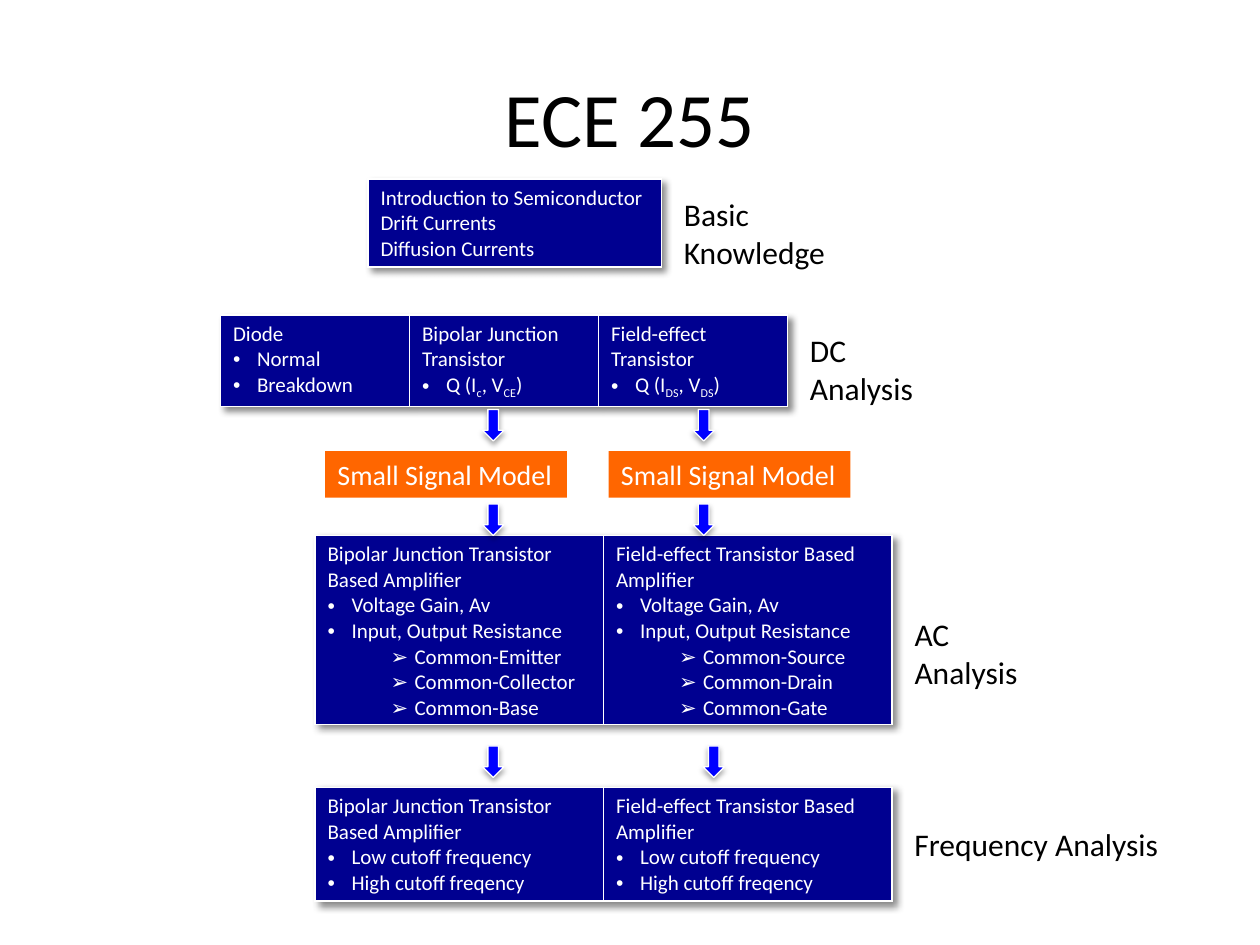
from lxml.etree import SubElement
from pptx import Presentation
from pptx.dml.color import RGBColor
from pptx.enum.shapes import MSO_SHAPE as Shape
from pptx.enum.text import MSO_ANCHOR as Anchor, PP_ALIGN as Align
from pptx.oxml import parse_xml
from pptx.oxml.ns import nsdecls, qn
from pptx.util import Inches, Pt

FONT = "Calibri"
WHITE, BLACK, NAVY, BLUE, ORANGE = "FFFFFF", "000000", "000090", "0000FF", "FF6600"
BULLETS = {"•": 0.19, "➢": 0.69}
HANG = 0.19

INTRODUCTION = [["Introduction to Semiconductor", "Drift Currents", "Diffusion Currents"]]
DEVICES = [
    ["Diode", "•Normal", "•Breakdown"],
    ["Bipolar Junction Transistor", "•Q (I~c~, V~CE~)"],
    ["Field-effect Transistor", "•Q (I~DS~, V~DS~)"],
]
AMPLIFIERS = {
    "Bipolar Junction Transistor Based Amplifier": ["Emitter", "Collector", "Base"],
    "Field-effect Transistor Based Amplifier": ["Source", "Drain", "Gate"],
}
GAINS = [
    [name, "•Voltage Gain, Av", "•Input, Output Resistance"]
    + [f"➢Common-{terminal}" for terminal in terminals]
    for name, terminals in AMPLIFIERS.items()
]
CUTOFFS = [[name, "•Low cutoff frequency", "•High cutoff freqency"] for name in AMPLIFIERS]

# left, top, column width, height, cells, label, label top
STAGES = [
    (2.92, 1.42, 2.33, 0.7, INTRODUCTION, "Basic Knowledge", 1.5),
    (1.75, 2.5, 1.5, 0.72, DEVICES, "DC Analysis", 2.58),
    (2.5, 4.25, 2.29, 1.5, GAINS, "AC Analysis", 4.83),
    (2.5, 6.25, 2.29, 0.9, CUTOFFS, "Frequency Analysis", 6.5),
]
MODEL_LEFTS = [2.58, 4.83]
ARROW_ROWS = [(3.25, [3.83, 5.5]), (4, [3.83, 5.5]), (5.92, [3.83, 5.58])]


def color(value):
    return RGBColor.from_string(value)


def paint(target, value):
    target.fill.solid()
    target.fill.fore_color.rgb = color(value)


def shadow(blur, distance, angle, alpha):
    return parse_xml(
        f'<a:effectLst {nsdecls("a")}><a:outerShdw blurRad="{Pt(blur)}" dist="{Pt(distance)}" '
        f'dir="{angle * 60000}" algn="ctr" rotWithShape="0"><a:srgbClr val="{BLACK}">'
        f'<a:alpha val="{alpha * 1000}"/></a:srgbClr></a:outerShdw></a:effectLst>'
    )


def write(para, text, size, ink):
    bullet = text[0] if text[0] in BULLETS else None
    if bullet:
        text = text[1:]
        props = para._p.get_or_add_pPr()
        props.set("marL", str(Inches(BULLETS[bullet])))
        props.set("indent", str(Inches(-HANG)))
        if bullet == "➢":
            para.level = 1
        SubElement(props, qn("a:buFont")).set("typeface", "Arial")
        SubElement(props, qn("a:buChar")).set("char", bullet)
    for index, part in enumerate(text.split("~")):
        span = para.add_run()
        span.text = part
        span.font.size = Pt(size)
        span.font.name = FONT
        span.font.color.rgb = color(ink)
        if index % 2:
            span.font._element.set("baseline", "-25000")


def add_text(page, text, left, top, width, height, size, wrap=False):
    box = page.shapes.add_textbox(*map(Inches, (left, top, width, height)))
    box.text_frame.word_wrap = wrap
    write(box.text_frame.paragraphs[0], text, size, BLACK)
    return box


def add_stage(page, left, top, width, height, cells):
    frame = page.shapes.add_table(
        1, len(cells), *map(Inches, (left, top, width * len(cells), height))
    )
    table = frame.table
    table._tbl.tblPr.insert(0, shadow(4, 3, 45, 45))
    for column, (cell, lines) in enumerate(zip(table.rows[0].cells, cells)):
        table.columns[column].width = Inches(width)
        props = cell._tc.get_or_add_tcPr()
        for side in "LRTB":
            border = SubElement(props, qn(f"a:ln{side}"), w=str(Pt(1)))
            ink = SubElement(border, qn("a:solidFill"))
            SubElement(ink, qn("a:srgbClr"), val=WHITE)
        paint(cell, NAVY)
        for index, line in enumerate(lines):
            body = cell.text_frame
            para = body.add_paragraph() if index else body.paragraphs[0]
            write(para, line, 12, WHITE)


def add_model(page, left):
    box = page.shapes.add_shape(Shape.RECTANGLE, *map(Inches, (left, 3.58, 1.92, 0.37)))
    box.shadow.inherit = False
    paint(box, ORANGE)
    box.line.fill.background()
    para = box.text_frame.paragraphs[0]
    para.alignment = Align.LEFT
    write(para, "Small Signal Model", 16, WHITE)


def add_arrow(page, left, top):
    arrow = page.shapes.add_shape(Shape.DOWN_ARROW, *map(Inches, (left, top, 0.17, 0.25)))
    paint(arrow, BLUE)
    arrow.line.color.rgb = color(WHITE)
    arrow.line.width = Pt(0.75)
    arrow._element.spPr.append(shadow(3.1, 1.8, 90, 35))


def main():
    deck = Presentation()
    deck.slide_width, deck.slide_height = Inches(10), Inches(7.5)
    page = deck.slides.add_slide(deck.slide_layouts[6])

    title = add_text(page, "ECE 255", 0.5, 0.3, 9, 1.25, 44, wrap=True)
    title.text_frame.vertical_anchor = Anchor.MIDDLE
    title.text_frame.paragraphs[0].alignment = Align.CENTER

    for left, top, width, height, cells, label, label_top in STAGES:
        add_stage(page, left, top, width, height, cells)
        label_left = left + width * len(cells) + 0.08
        add_text(page, label, label_left, label_top, 0.12 * len(label), 0.4, 18)
    for left in MODEL_LEFTS:
        add_model(page, left)
    for top, lefts in ARROW_ROWS:
        for left in lefts:
            add_arrow(page, left, top)

    deck.save("out.pptx")


if __name__ == "__main__":
    main()
